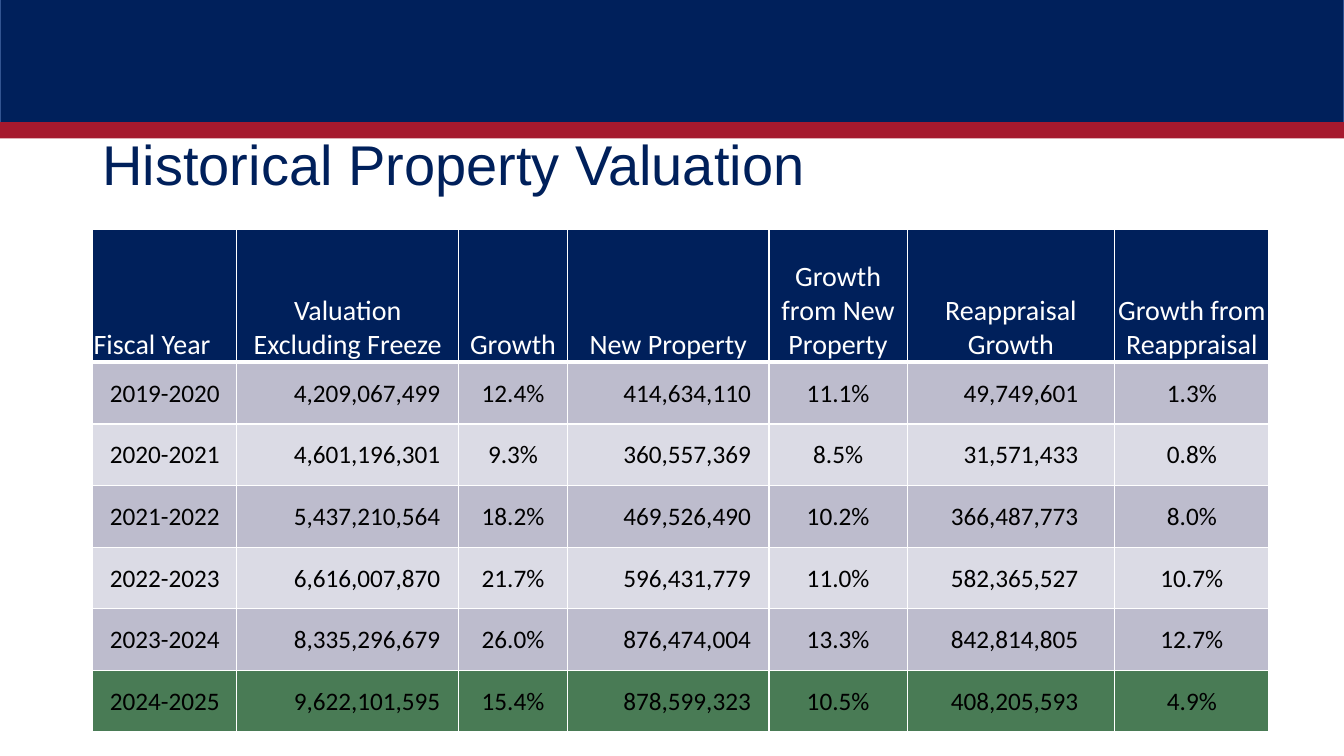
from dataclasses import dataclass

from lxml import etree
from pptx import Presentation
from pptx.dml.color import RGBColor
from pptx.enum.shapes import MSO_SHAPE
from pptx.enum.text import MSO_ANCHOR, PP_ALIGN
from pptx.oxml.ns import qn
from pptx.util import Pt

RECT = MSO_SHAPE.RECTANGLE
MIDDLE, BOTTOM = MSO_ANCHOR.MIDDLE, MSO_ANCHOR.BOTTOM
LEFT, CENTER, RIGHT = PP_ALIGN.LEFT, PP_ALIGN.CENTER, PP_ALIGN.RIGHT


@dataclass(frozen=True)
class Theme:
    navy: str = "00205B"
    outline: str = "325491"
    red: str = "A6192E"
    white: str = "FFFFFF"
    black: str = "000000"
    bands: tuple = ("BDBCCD", "DBDBE5")
    latest: str = "497B55"
    title_font: str = "Arial"
    table_font: str = "Calibri"
    title_size: int = 40
    header_size: int = 20
    body_size: int = 18


T = Theme()

COLUMNS = [
    ("Fiscal Year", 103, CENTER, 0.7),
    ("Valuation Excluding Freeze", 158.4, RIGHT, 13),
    ("Growth", 77.8, CENTER, 0.7),
    ("New Property", 144, RIGHT, 13),
    ("Growth from New Property", 98.6, CENTER, 0.7),
    ("Reappraisal Growth", 148.3, RIGHT, 26),
    ("Growth from Reappraisal", 110.2, CENTER, 0.7),
]
VALUATIONS = [
    ("2019-2020", "4,209,067,499", "12.4%", "414,634,110", "11.1%", "49,749,601", "1.3%"),
    ("2020-2021", "4,601,196,301", "9.3%", "360,557,369", "8.5%", "31,571,433", "0.8%"),
    ("2021-2022", "5,437,210,564", "18.2%", "469,526,490", "10.2%", "366,487,773", "8.0%"),
    ("2022-2023", "6,616,007,870", "21.7%", "596,431,779", "11.0%", "582,365,527", "10.7%"),
    ("2023-2024", "8,335,296,679", "26.0%", "876,474,004", "13.3%", "842,814,805", "12.7%"),
    ("2024-2025", "9,622,101,595", "15.4%", "878,599,323", "10.5%", "408,205,593", "4.9%"),
]
HEADER_HEIGHT, ROW_HEIGHT = 95, 44


def rgb(color):
    return RGBColor.from_string(color)


def set_font(p, name, size, color):
    p.font.name = name
    p.font.size = Pt(size)
    p.font.bold = False
    p.font.color.rgb = rgb(color)


def add_band(s, top, height, fill, line=None):
    sp = s.shapes.add_shape(RECT, Pt(0), Pt(top), Pt(960), Pt(height))
    sp.shadow.inherit = False
    sp.fill.solid()
    sp.fill.fore_color.rgb = rgb(fill)
    if line:
        sp.line.color.rgb = rgb(line)
        sp.line.width = Pt(1)
    else:
        sp.line.fill.background()


def add_title(s, text):
    sp = s.shapes.add_textbox(Pt(66.2), Pt(88.6), Pt(828), Pt(62.6))
    tf = sp.text_frame
    tf.word_wrap = True
    tf.vertical_anchor = MIDDLE
    p = tf.paragraphs[0]
    p.text = text
    p.line_spacing = 0.9
    set_font(p, T.title_font, T.title_size, T.navy)


def set_borders(cell, bottom):
    tc_pr = cell._tc.get_or_add_tcPr()
    for side, width in (("lnL", 1), ("lnR", 1), ("lnT", 1), ("lnB", bottom)):
        ln = etree.SubElement(tc_pr, qn(f"a:{side}"), w=str(Pt(width)))
        fill = etree.SubElement(ln, qn("a:solidFill"))
        etree.SubElement(fill, qn("a:srgbClr"), val=T.white)


def fill_cell(cell, text, fill, size, color, align, anchor, right=0.7, bottom=1):
    set_borders(cell, bottom)
    cell.fill.solid()
    cell.fill.fore_color.rgb = rgb(fill)
    cell.margin_left = cell.margin_top = Pt(0.7)
    cell.margin_right = Pt(right)
    cell.margin_bottom = Pt(0)
    cell.vertical_anchor = anchor
    p = cell.text_frame.paragraphs[0]
    p.text = text
    p.alignment = align
    set_font(p, T.table_font, size, color)


def add_valuation_table(s):
    width = sum(column[1] for column in COLUMNS)
    height = HEADER_HEIGHT + ROW_HEIGHT * len(VALUATIONS)
    table = s.shapes.add_table(len(VALUATIONS) + 1, len(COLUMNS), Pt(66.2),
                               Pt(163.8), Pt(width), Pt(height)).table
    table.rows[0].height = Pt(HEADER_HEIGHT)
    for i, (heading, col_width, align, right) in enumerate(COLUMNS):
        table.columns[i].width = Pt(col_width)
        fill_cell(table.cell(0, i), heading, T.navy, T.header_size, T.white,
                  CENTER if i else LEFT, BOTTOM, bottom=3)
    for j, values in enumerate(VALUATIONS, 1):
        table.rows[j].height = Pt(ROW_HEIGHT)
        fill = T.latest if j == len(VALUATIONS) else T.bands[(j - 1) % 2]
        for i, (value, column) in enumerate(zip(values, COLUMNS)):
            fill_cell(table.cell(j, i), value, fill, T.body_size, T.black,
                      column[2], MIDDLE, right=column[3])


def main():
    prs = Presentation()
    prs.slide_width, prs.slide_height = Pt(960), Pt(540)
    s = prs.slides.add_slide(prs.slide_layouts[6])
    add_band(s, -0.7, 88.6, T.navy, T.outline)
    add_band(s, 87.2, 11.6, T.red)
    add_title(s, "Historical Property Valuation")
    add_valuation_table(s)
    prs.save("out.pptx")


if __name__ == "__main__":
    main()
